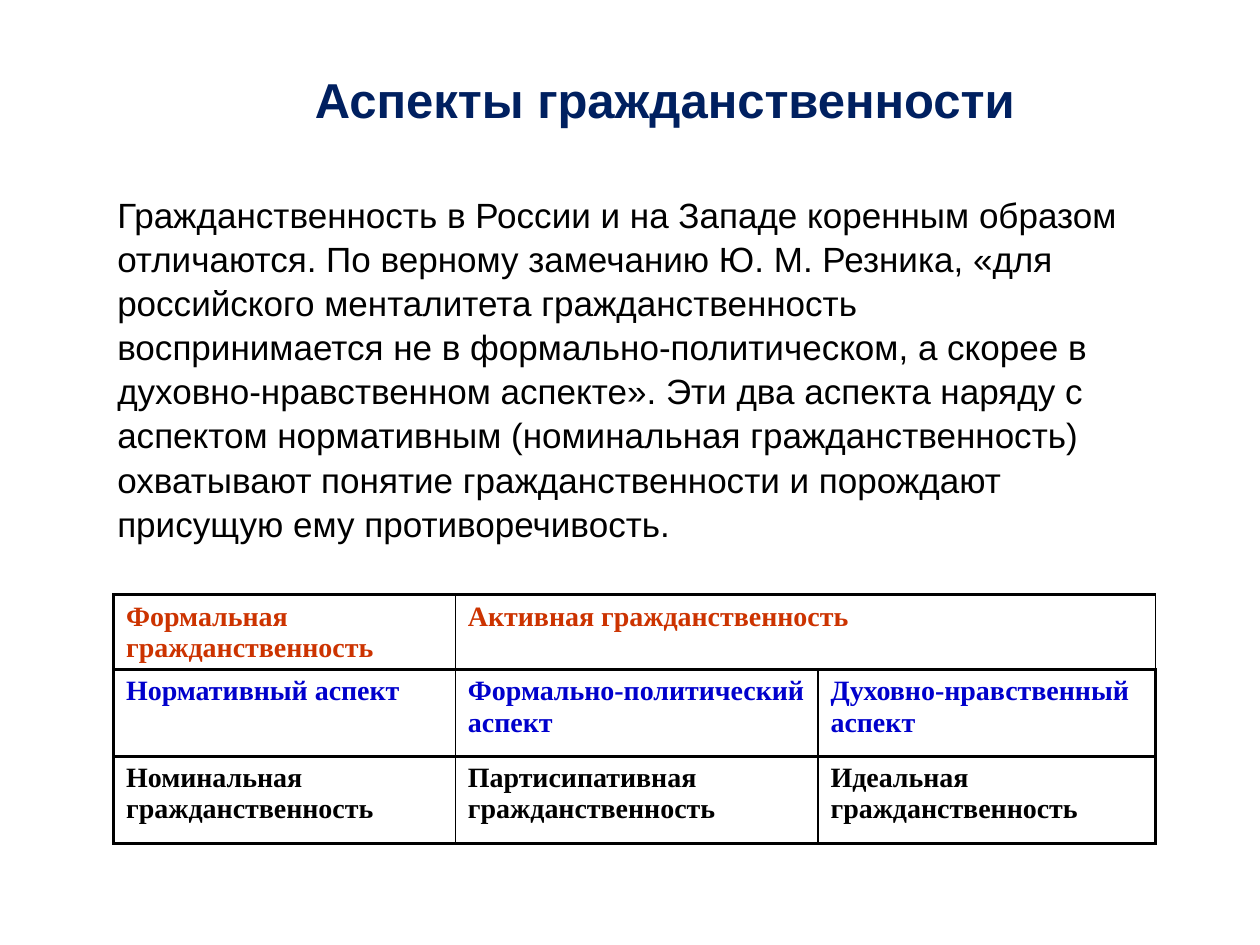
from lxml.etree import SubElement
from pptx import Presentation
from pptx.dml.color import RGBColor
from pptx.enum.text import MSO_ANCHOR as Anchor, MSO_AUTO_SIZE as AutoSize, PP_ALIGN as Align
from pptx.oxml.ns import qn
from pptx.util import Cm, Pt

NAVY = RGBColor(0x00, 0x20, 0x60)
BLACK = RGBColor(0x00, 0x00, 0x00)
RED = RGBColor(0xCC, 0x33, 0x00)
BLUE = RGBColor(0x00, 0x00, 0xCC)

TITLE = "Аспекты гражданственности"
EXPLANATION = (
    "Гражданственность в России и на Западе коренным образом отличаются. "
    "По верному замечанию Ю. М. Резника, «для российского менталитета "
    "гражданственность воспринимается не в формально-политическом, а скорее "
    "в духовно-нравственном аспекте». Эти два аспекта наряду с аспектом "
    "нормативным (номинальная гражданственность) охватывают понятие "
    "гражданственности и порождают присущую ему противоречивость."
)
ASPECTS = [
    (RED, ["Формальная\nгражданственность", "Активная гражданственность", ""]),
    (BLUE, ["Нормативный аспект", "Формально-политический аспект", "Духовно-нравственный аспект"]),
    (BLACK, ["Номинальная гражданственность", "Партисипативная гражданственность",
             "Идеальная гражданственность"]),
]
COLUMN_WIDTHS = [Cm(6.89), Cm(7.31), Cm(6.8)]
ROW_HEIGHTS = [Cm(1.5), Cm(1.75), Cm(1.75)]


def format_text(frame, font_name, size, color, bold):
    """Apply one font to every run of a text frame."""
    for paragraph in frame.paragraphs:
        for run in paragraph.runs:
            run.font.name = font_name
            run.font.size = Pt(size)
            run.font.bold = bold
            run.font.color.rgb = color


def fill_placeholder(holder, box, text, size, color, bold, align, anchor, spacing):
    """Move a placeholder and give it one formatted paragraph."""
    holder.left, holder.top, holder.width, holder.height = box
    frame = holder.text_frame
    frame.text = text
    frame.word_wrap = True
    frame.auto_size = AutoSize.NONE
    frame.vertical_anchor = anchor
    paragraph = frame.paragraphs[0]
    paragraph.alignment = align
    paragraph.line_spacing = spacing
    paragraph.space_before = Pt(0)
    format_text(frame, "Arial", size, color, bold)


def set_borders(cell, **widths):
    """Draw black cell borders, given as side=points in schema order."""
    properties = cell._tc.get_or_add_tcPr()
    for side, points in widths.items():
        line = SubElement(properties, qn(f"a:ln{side}"), w=str(Pt(points)))
        solid = SubElement(line, qn("a:solidFill"))
        SubElement(solid, qn("a:srgbClr"), val=str(BLACK))


def add_aspect_table(slide):
    """Add the table of aspects with heavy outer and row borders."""
    aspects = slide.shapes.add_table(
        len(ASPECTS), len(COLUMN_WIDTHS), Cm(2.29), Cm(11.99),
        sum(COLUMN_WIDTHS), sum(ROW_HEIGHTS)).table
    aspects.first_row = aspects.horz_banding = False
    for column, width in zip(aspects.columns, COLUMN_WIDTHS):
        column.width = width
    for row, height in zip(aspects.rows, ROW_HEIGHTS):
        row.height = height
    aspects.cell(0, 1).merge(aspects.cell(0, 2))
    last = len(COLUMN_WIDTHS) - 1
    for row_index, (color, labels) in enumerate(ASPECTS):
        for column_index, label in enumerate(labels):
            cell = aspects.cell(row_index, column_index)
            set_borders(cell, L=1 if column_index else 2,
                        R=2 if column_index == last else 1, T=2, B=2)
            cell.fill.background()
            if label:
                cell.text_frame.text = label
                format_text(cell.text_frame, "Times New Roman", 16, color, True)


def main():
    """Build the slide on aspects of civic consciousness."""
    deck = Presentation()
    deck.slide_width, deck.slide_height = Cm(25.4), Cm(19.05)
    slide = deck.slides.add_slide(deck.slide_layouts[0])
    heading, explanation = slide.placeholders
    fill_placeholder(heading, (Cm(4.5), Cm(0.89), Cm(17.8), Cm(1.83)),
                     TITLE, 28, NAVY, True, Align.CENTER, Anchor.BOTTOM, 0.9)
    fill_placeholder(explanation, (Cm(2.11), Cm(3.73), Cm(21), Cm(5)),
                     EXPLANATION, 20, BLACK, False, Align.LEFT, Anchor.TOP, 1.05)
    add_aspect_table(slide)
    deck.save("out.pptx")


if __name__ == "__main__":
    main()
